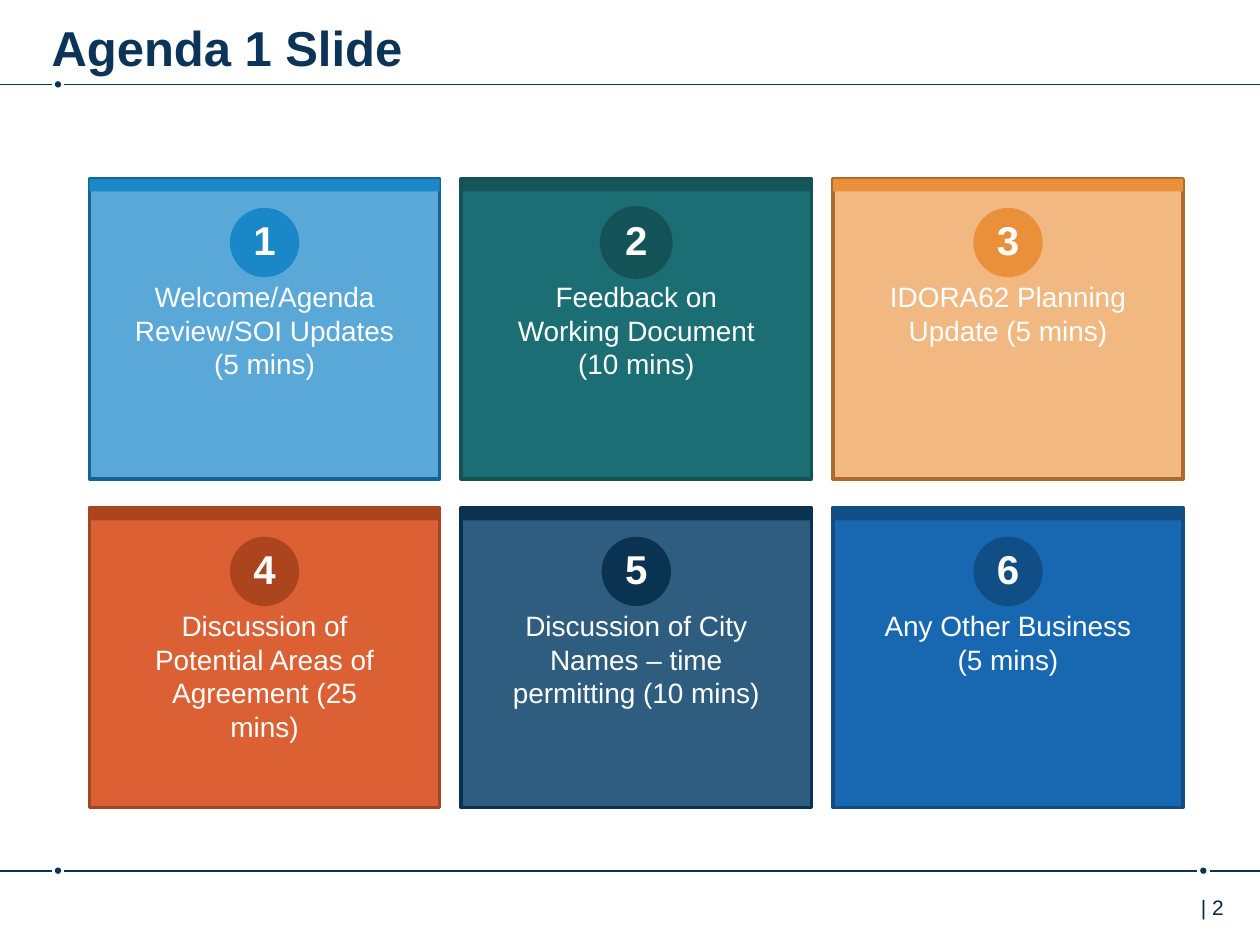
from dataclasses import dataclass

from lxml import etree
from pptx import Presentation, util as u
from pptx.dml.color import RGBColor
from pptx.enum import shapes, text
from pptx.oxml.ns import qn


@dataclass(frozen=True)
class Theme:
    font: str = "Arial"
    navy: str = "0C3458"
    ink: str = "002B49"
    white: str = "FFFFFF"
    title: int = 28
    num: int = 23
    body: int = 16
    foot: int = 12


T = Theme()
WIDE, HIGH = 10, 7.5
RECT = shapes.MSO_SHAPE.RECTANGLE
OVAL = shapes.MSO_SHAPE.OVAL
MID, LEFT = text.PP_ALIGN.CENTER, text.PP_ALIGN.LEFT

# Card grid: left, top, card size and gaps
GRID_X, GRID_Y = 0.71, 1.42
CARD_W, CARD_H = 2.78, 2.38
GAP_X, GAP_Y = 0.17, 0.23
COLS = 3

# Lines of text, fill, opacity %, edge, accent, bar opacity %
CARDS = [
    (["Welcome/Agenda Review/SOI Updates", "(5 mins)"],
     "1A87C9", 72, "136495", "1A87C9", 100),
    (["Feedback on Working Document (10 mins)"],
     "1B6F74", 100, "145256", "145357", 80),
    (["IDORA62 Planning Update (5 mins)"],
     "EA903A", 63, "AD6B2B", "EA903A", 100),
    (["Discussion of Potential Areas of Agreement (25 mins)"],
     "DB6033", 100, "A24726", "AC441E", 100),
    (["Discussion of City Names – time permitting (10 mins)"],
     "0D436C", 86, "0A3250", "0A3251", 100),
    (["Any Other Business (5 mins)"],
     "1768B1", 100, "114D83", "114E85", 100),
]
EDGED = 2  # the card whose badge has an outline


def rgb(code):
    return RGBColor.from_string(code)


def place(x, y, w, h):
    return [u.Inches(v) for v in (x, y, w, h)]


def shape(slide, kind, box, fill, alpha=100, edge=None):
    item = slide.shapes.add_shape(kind, *place(*box))
    item.shadow.inherit = False
    item.fill.solid()
    item.fill.fore_color.rgb = rgb(fill)
    if alpha < 100:
        tint = item.fill._xPr.find(".//" + qn("a:srgbClr"))
        etree.SubElement(tint, qn("a:alpha"), val=str(alpha * 1000))
    if edge:
        item.line.color.rgb = rgb(edge)
        item.line.width = u.Pt(2)
    else:
        item.line.fill.background()


def label(slide, box, lines, size, color, bold=False, align=MID,
          left=0.1, top=0.05):
    frame = slide.shapes.add_textbox(*place(*box)).text_frame
    frame.word_wrap = True
    frame.margin_left, frame.margin_top = u.Inches(left), u.Inches(top)
    frame.text = "\n".join(lines)
    for para in frame.paragraphs:
        para.alignment = align
        for run in para.runs:
            font = run.font
            font.name, font.size, font.bold = T.font, u.Pt(size), bold
            font.color.rgb = rgb(color)


def rule(slide, y, dots):
    """Full-width line, broken around a dot at each given x."""
    rad, gap = 0.025, 0.05
    start = 0
    for dot in [*dots, None]:
        end = WIDE if dot is None else dot - gap
        line = slide.shapes.add_connector(
            shapes.MSO_CONNECTOR.STRAIGHT, *place(start, y, end, y))
        line.line.color.rgb = rgb(T.navy)
        line.line.width = u.Pt(1)
        etree.SubElement(line._element.spPr, qn("a:effectLst"))
        if dot is not None:
            shape(slide, OVAL, (dot - rad, y - rad, 2 * rad, 2 * rad), T.navy)
            start = dot + gap


def header(slide, box):
    x, y, w, h = box
    label(slide, (x + 0.41, y + 0.05, 8.76, 0.49), ["Agenda 1 Slide"],
          T.title, T.navy, True, LEFT, 0, 0.09)
    rule(slide, y + h, [x + 0.46])


def footer(slide, box):
    x, y, w, h = box
    rule(slide, y, [x + 0.46, x + w - 0.45])
    label(slide, (x + w - 0.71, y + 0.14, 0.71, 0.4), ["| 2"],
          T.foot, T.ink, align=LEFT, left=0.24)


def card(slide, box, num, data):
    x, y, w, h = box
    lines, fill, alpha, edge, accent, sheer = data
    shape(slide, RECT, box, fill, alpha, edge)
    shape(slide, RECT, (x, y, w, 0.1), accent, sheer)
    # Numbered badge
    disc = 0.55
    shape(slide, OVAL, (x + (w - disc) / 2, y + 0.23, disc, disc), accent,
          edge=edge if num == EDGED else None)
    label(slide, (x, y + 0.24, w, 0.49), [str(num)], T.num, T.white, True)
    # Topic
    pad = 0.26
    label(slide, (x + pad, y + 0.75, w - 2 * pad, 0.91), lines,
          T.body, T.white)


def agenda(slide, box):
    x, y, w, h = box
    for i, data in enumerate(CARDS):
        row, col = divmod(i, COLS)
        spot = (x + col * (w + GAP_X), y + row * (h + GAP_Y), w, h)
        card(slide, spot, i + 1, data)


def main():
    deck = Presentation()
    deck.slide_width, deck.slide_height = u.Inches(WIDE), u.Inches(HIGH)
    slide = deck.slides.add_slide(deck.slide_layouts[6])
    header(slide, (0, 0, WIDE, 0.67))
    footer(slide, (0, 6.91, WIDE, HIGH - 6.91))
    agenda(slide, (GRID_X, GRID_Y, CARD_W, CARD_H))
    deck.save("out.pptx")


if __name__ == "__main__":
    main()
